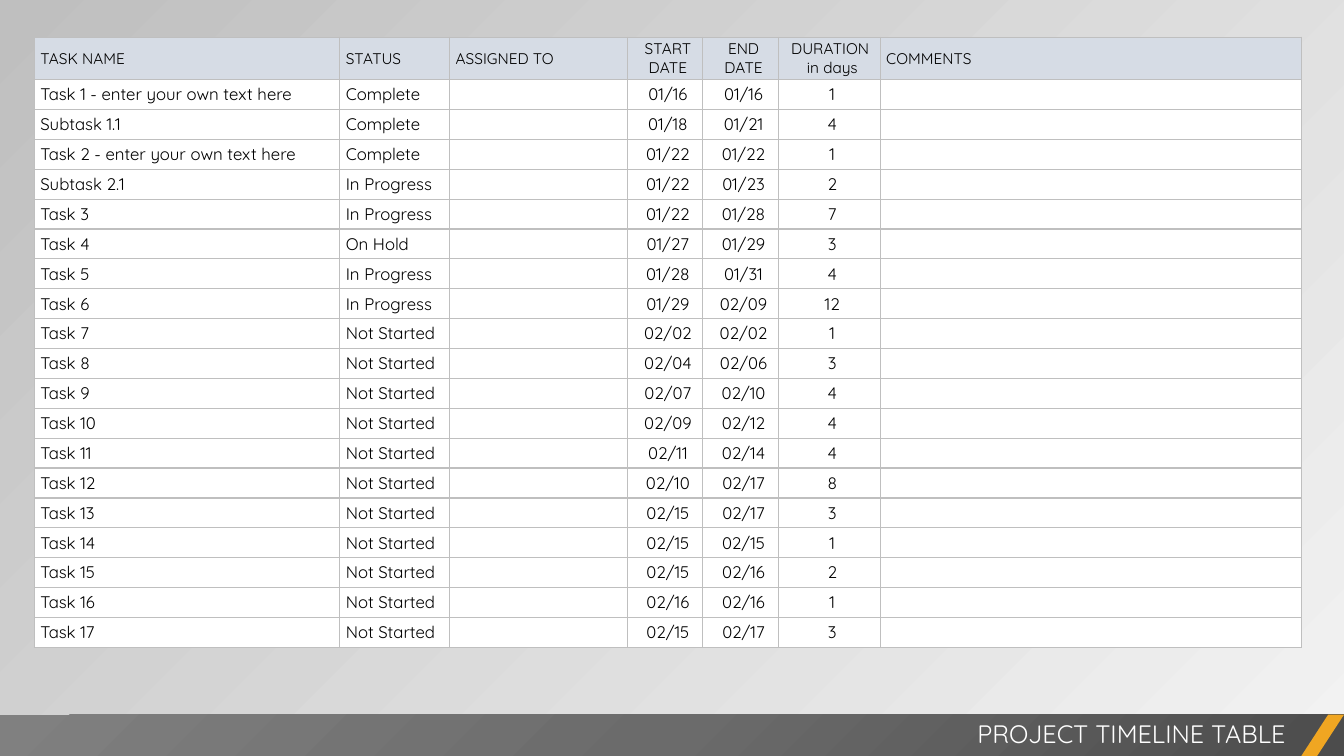
import pptx
import pptx.dml.color
import pptx.enum.shapes
import pptx.enum.text
import pptx.oxml
import pptx.oxml.ns
import pptx.util

Inches = pptx.util.Inches
Pt = pptx.util.Pt
ALIGN = pptx.enum.text.PP_ALIGN
SHAPE = pptx.enum.shapes.MSO_SHAPE

FONT = "Quicksand"
COLORS = {
    "page_light": "F2F2F2",
    "page_dark": "BFBFBF",
    "header": "D6DCE5",
    "cell": "FFFFFF",
    "border": "BFBFBF",
    "text": "000000",
    "title": "FFFFFF",
    "bar_dark": "4C4C4C",
    "bar_middle": "6B6B6B",
    "bar_light": "808080",
    "accent": "F0A622",
}

# Table content and measures
HEADERS = ["TASK NAME", "STATUS", "ASSIGNED TO", "START DATE", "END DATE",
           "DURATION \nin days", "COMMENTS"]
TASKS = [
    ("Task 1 - enter your own text here", "Complete", "01/16", "01/16", 1),
    ("Subtask 1.1", "Complete", "01/18", "01/21", 4),
    ("Task 2 - enter your own text here", "Complete", "01/22", "01/22", 1),
    ("Subtask 2.1", "In Progress", "01/22", "01/23", 2),
    ("Task 3", "In Progress", "01/22", "01/28", 7),
    ("Task 4", "On Hold", "01/27", "01/29", 3),
    ("Task 5", "In Progress", "01/28", "01/31", 4),
    ("Task 6", "In Progress", "01/29", "02/09", 12),
    ("Task 7", "Not Started", "02/02", "02/02", 1),
    ("Task 8", "Not Started", "02/04", "02/06", 3),
    ("Task 9", "Not Started", "02/07", "02/10", 4),
    ("Task 10", "Not Started", "02/09", "02/12", 4),
    ("Task 11", "Not Started", "02/11", "02/14", 4),
    ("Task 12", "Not Started", "02/10", "02/17", 8),
    ("Task 13", "Not Started", "02/15", "02/17", 3),
    ("Task 14", "Not Started", "02/15", "02/15", 1),
    ("Task 15", "Not Started", "02/15", "02/16", 2),
    ("Task 16", "Not Started", "02/16", "02/16", 1),
    ("Task 17", "Not Started", "02/15", "02/17", 3),
]
COLUMN_WIDTHS = [3.03, 1.09, 1.76, 0.75, 0.75, 1.01, 4.18]
CENTERED_COLUMNS = {3, 4, 5}
TABLE_HEIGHT = 6.06
HEADER_HEIGHT = 0.42


def rgb(name):
    return pptx.dml.color.RGBColor.from_string(COLORS[name])


def style_paragraph(para, size, color, align):
    para.alignment = align
    para.font.name = FONT
    para.font.size = Pt(size)
    para.font.color.rgb = rgb(color)


def paint_background(page):
    fill = page.background.fill
    fill.gradient()
    fill.gradient_angle = 135
    for stop, name in zip(fill.gradient_stops, ("page_light", "page_dark")):
        stop.color.rgb = rgb(name)


def add_borders(cell):
    properties = cell._tc.get_or_add_tcPr()
    for index, side in enumerate(("lnL", "lnR", "lnT", "lnB")):
        line = pptx.oxml.parse_xml(
            f'<a:{side} {pptx.oxml.ns.nsdecls("a")} w="{Pt(1)}"><a:solidFill>'
            f'<a:srgbClr val="{COLORS["border"]}"/></a:solidFill></a:{side}>')
        properties.insert(index, line)


def fill_cell(cell, text, size, background, align):
    cell.text = text
    cell.vertical_anchor = pptx.enum.text.MSO_ANCHOR.MIDDLE
    cell.margin_left = Inches(0.06)
    cell.margin_right = cell.margin_top = cell.margin_bottom = 0
    cell.fill.solid()
    cell.fill.fore_color.rgb = rgb(background)
    add_borders(cell)
    for para in cell.text_frame.paragraphs:
        style_paragraph(para, size, "text", align)
        if not text:
            # Keeps an empty cell from growing its row
            para._p.append(pptx.oxml.parse_xml(
                f'<a:endParaRPr {pptx.oxml.ns.nsdecls("a")} sz="{size * 100}"/>'))


def add_task_table(page):
    rows = [HEADERS] + [[name, status, "", start, end, str(days), ""]
                        for name, status, start, end, days in TASKS]
    table = page.shapes.add_table(
        len(rows), len(HEADERS), Inches(0.34), Inches(0.37),
        Inches(sum(COLUMN_WIDTHS)), Inches(TABLE_HEIGHT)).table
    table.first_row = table.horz_banding = False
    for column, width in zip(table.columns, COLUMN_WIDTHS):
        column.width = Inches(width)

    task_height = (TABLE_HEIGHT - HEADER_HEIGHT) / len(TASKS)
    for row_index, texts in enumerate(rows):
        is_header = row_index == 0
        table.rows[row_index].height = Inches(HEADER_HEIGHT if is_header else task_height)
        size, background = (11, "header") if is_header else (12, "cell")
        for column_index, text in enumerate(texts):
            align = ALIGN.CENTER if column_index in CENTERED_COLUMNS else ALIGN.LEFT
            fill_cell(table.cell(row_index, column_index), text, size, background, align)


def add_plain_shape(page, kind, left, top, width, height):
    shape = page.shapes.add_shape(kind, Inches(left), Inches(top),
                                  Inches(width), Inches(height))
    shape.shadow.inherit = False
    shape.line.fill.background()
    return shape


def add_footer_bar(page):
    bar = add_plain_shape(page, SHAPE.RECTANGLE, 0, 7.09, 13.33, 0.42)
    names = ("bar_dark", "bar_middle", "bar_light")
    stops = "".join(
        f'<a:gs pos="{index * 50000}"><a:srgbClr val="{COLORS[name]}"/></a:gs>'
        for index, name in enumerate(names))
    # Radial gradient centred on the lower right corner
    gradient = pptx.oxml.parse_xml(
        f'<a:gradFill {pptx.oxml.ns.nsdecls("a")}><a:gsLst>{stops}</a:gsLst>'
        '<a:path path="circle"><a:fillToRect l="100000" t="100000"/></a:path>'
        '</a:gradFill>')
    bar.element.spPr.find(pptx.oxml.ns.qn("a:prstGeom")).addnext(gradient)


def add_accent(page):
    accent = add_plain_shape(page, SHAPE.PARALLELOGRAM, 12.9, 7.09, 0.43, 0.42)
    accent.adjustments[0] = 0.65
    accent.fill.solid()
    accent.fill.fore_color.rgb = rgb("accent")


def add_title(page, text):
    box = page.shapes.add_textbox(Inches(5.25), Inches(7.08), Inches(7.6), Inches(0.4))
    frame = box.text_frame
    frame.word_wrap = True
    frame.auto_size = pptx.enum.text.MSO_AUTO_SIZE.SHAPE_TO_FIT_TEXT
    frame.text = text
    style_paragraph(frame.paragraphs[0], 18, "title", ALIGN.RIGHT)


def main():
    deck = pptx.Presentation()
    deck.slide_width = Inches(13.33)
    deck.slide_height = Inches(7.5)
    page = deck.slides.add_slide(deck.slide_layouts[6])

    paint_background(page)
    add_task_table(page)

    # Footer
    add_footer_bar(page)
    add_accent(page)
    add_title(page, "PROJECT TIMELINE TABLE")

    deck.save("out.pptx")


if __name__ == "__main__":
    main()
